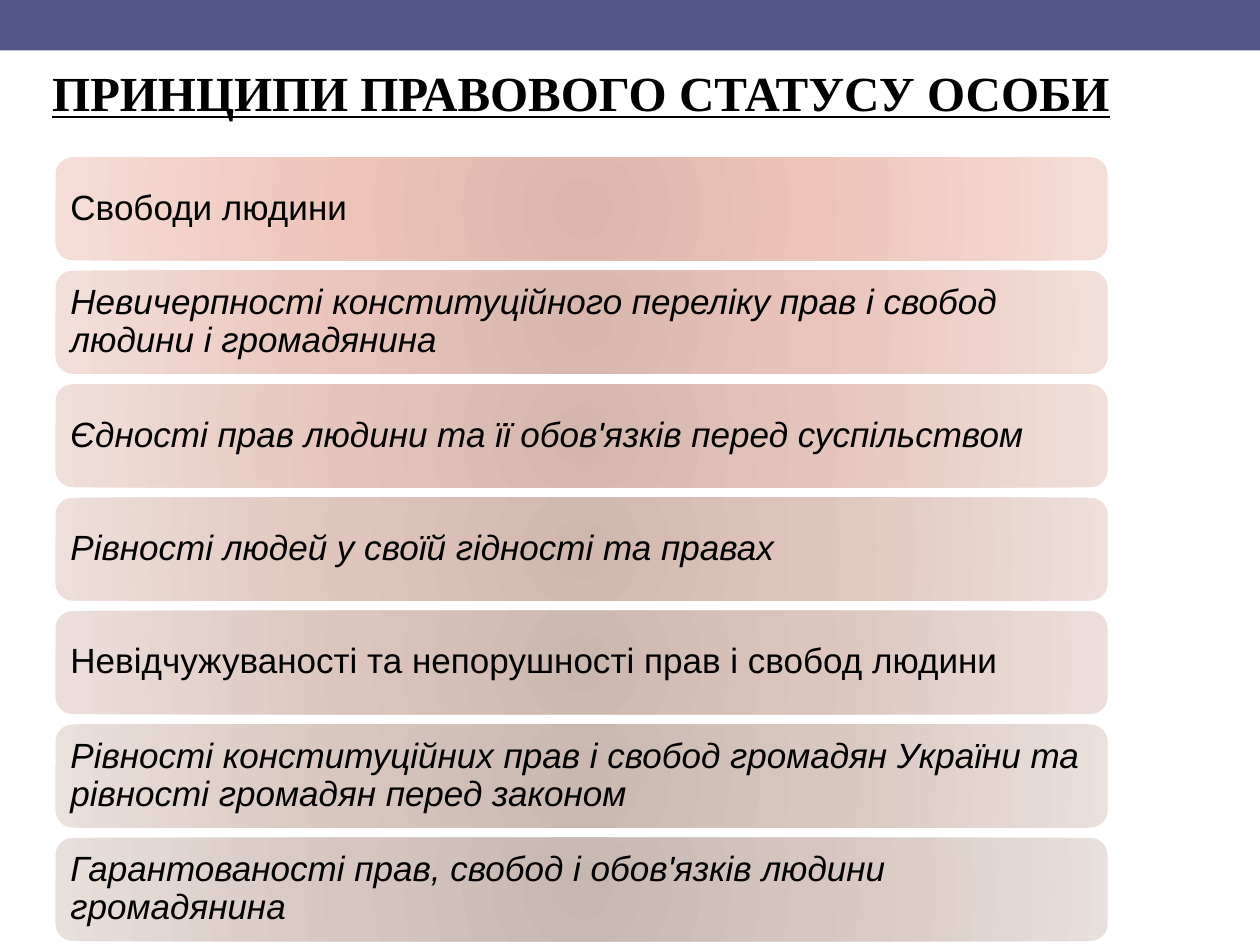
from pptx import Presentation
from pptx.dml.color import RGBColor
from pptx.enum.shapes import MSO_SHAPE
from pptx.enum.text import MSO_ANCHOR, MSO_AUTO_SIZE, PP_ALIGN
from pptx.oxml import parse_xml
from pptx.oxml.ns import nsdecls, qn
from pptx.util import Cm, Pt

RECTANGLE, ROUNDED = MSO_SHAPE.RECTANGLE, MSO_SHAPE.ROUNDED_RECTANGLE
LEFT, CENTER = PP_ALIGN.LEFT, PP_ALIGN.CENTER
MIDDLE = MSO_ANCHOR.MIDDLE
GROW = MSO_AUTO_SIZE.SHAPE_TO_FIT_TEXT

COLORS = {"band": "53548A", "text": "000000"}
GRADIENT_STOPS = (0, 45, 100)
GAP_RATIO = 0.1  # gap between cards, as a share of card height

TITLE = "ПРИНЦИПИ ПРАВОВОГО СТАТУСУ ОСОБИ"
# Text, italic, gradient colours from the centre outwards
PRINCIPLES = [
    ("Свободи людини", False, ("DDB5AB", "EEC4B8", "F6DED8")),
    ("Невичерпності конституційного переліку прав і свобод людини і громадянина",
     True, ("D8B6AC", "E9C4BA", "F3DFD9")),
    ("Єдності прав людини та її обов'язків перед суспільством",
     True, ("D4B6AD", "E5C5BB", "F1DFDA")),
    ("Рівності людей у своїй гідності та правах",
     True, ("D0B7AE", "E0C5BC", "EEDFDA")),
    ("Невідчужуваності та непорушності прав і свобод людини",
     False, ("CCB7AF", "DCC5BD", "ECDFDB")),
    ("Рівності конституційних прав і свобод громадян України та рівності громадян перед законом",
     True, ("C9B7B0", "D9C6BE", "EAE0DC")),
    ("Гарантованості прав, свобод і обов'язків людини громадянина",
     True, ("C6B7B1", "D6C6BF", "E8E0DC")),
]


def write_text(frame, text, font="Arial", size=20, bold=False, italic=False,
               underline=False, align=LEFT, line_spacing=None):
    frame.word_wrap = True
    paragraph = frame.paragraphs[0]
    paragraph.alignment = align
    paragraph.line_spacing = line_spacing
    run = paragraph.add_run()
    run.text = text
    run.font.name = font
    run.font.size = Pt(size)
    run.font.bold = bold
    run.font.italic = italic
    run.font.underline = underline
    run.font.color.rgb = RGBColor.from_string(COLORS["text"])


def add_plain_shape(slide, kind, left, top, width, height, color):
    """Add a shape with a solid fill, no outline and no shadow."""
    shape = slide.shapes.add_shape(kind, Cm(left), Cm(top), Cm(width), Cm(height))
    shape.shadow.inherit = False
    shape.line.fill.background()
    shape.fill.solid()
    shape.fill.fore_color.rgb = RGBColor.from_string(color)
    return shape


def set_radial_gradient(shape, colors):
    stops = "".join(
        f'<a:gs pos="{position * 1000}"><a:srgbClr val="{color}"/></a:gs>'
        for position, color in zip(GRADIENT_STOPS, colors))
    gradient = parse_xml(
        f'<a:gradFill {nsdecls("a")} rotWithShape="1"><a:gsLst>{stops}</a:gsLst>'
        '<a:path path="circle"><a:fillToRect l="100000" t="100000" '
        'r="100000" b="100000"/></a:path></a:gradFill>')
    properties = shape._element.spPr
    properties.replace(properties.find(qn("a:solidFill")), gradient)


def add_title(slide, left, top, width, height):
    box = slide.shapes.add_textbox(Cm(left), Cm(top), Cm(width), Cm(height))
    box.text_frame.auto_size = GROW
    write_text(box.text_frame, TITLE, font="Times New Roman", size=28,
               bold=True, underline=True, align=CENTER)


def add_principles(slide, left, top, width, height):
    """Stack the cards so that they and their gaps fill the given box."""
    count = len(PRINCIPLES)
    card_height = height / (count + GAP_RATIO * (count - 1))
    pitch = card_height * (1 + GAP_RATIO)
    for index, (text, italic, colors) in enumerate(PRINCIPLES):
        card = add_plain_shape(slide, ROUNDED, left, top + index * pitch,
                               width, card_height, colors[0])
        set_radial_gradient(card, colors)
        frame = card.text_frame
        frame.vertical_anchor = MIDDLE
        frame.margin_left = frame.margin_right = Cm(0.2)
        frame.margin_top = frame.margin_bottom = Cm(0.2)
        write_text(frame, text, italic=italic, line_spacing=0.9)


def main():
    presentation = Presentation()
    presentation.slide_width, presentation.slide_height = Cm(25.4), Cm(19.05)
    slide = presentation.slides.add_slide(presentation.slide_layouts[6])
    add_plain_shape(slide, RECTANGLE, 0, 0, 25.4, 1.02, COLORS["band"])
    add_title(slide, 0.33, 1.14, 22.76, 1.45)
    add_principles(slide, 1.12, 3.17, 21.21, 15.8)
    presentation.save("out.pptx")


if __name__ == "__main__":
    main()
